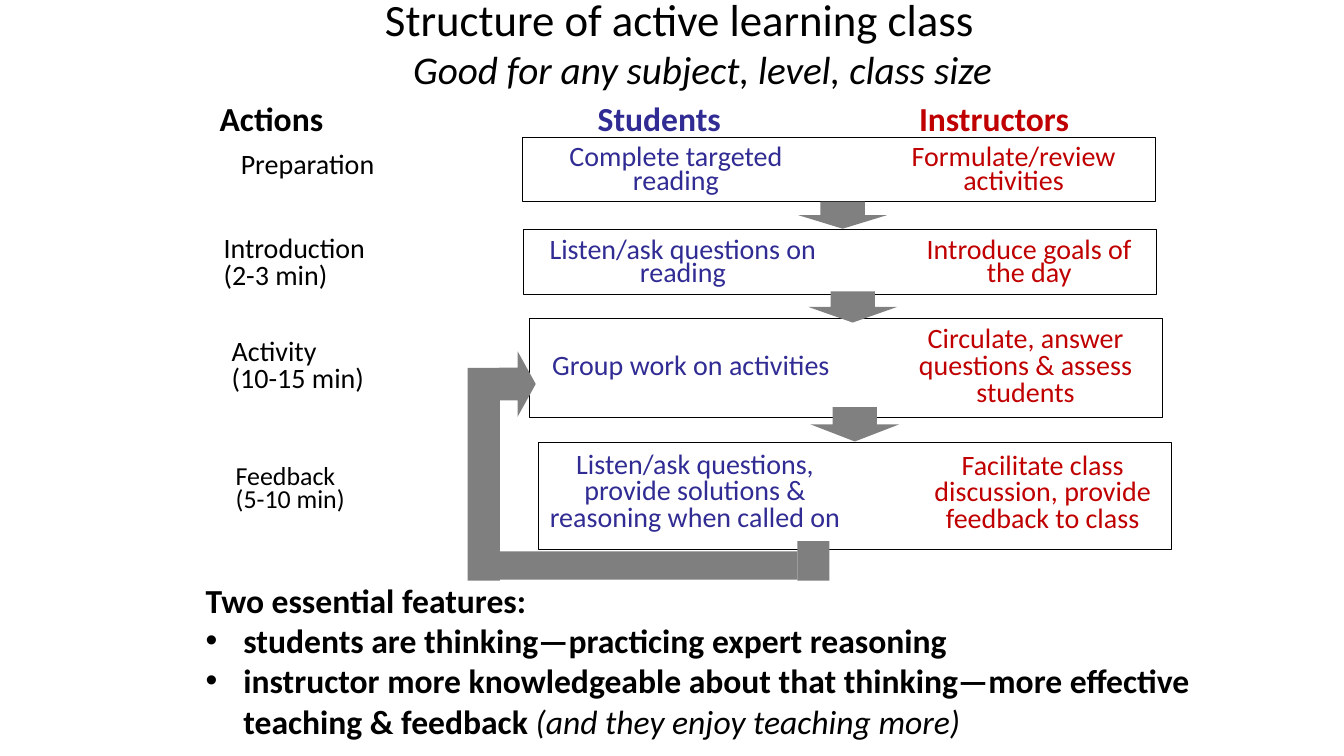
from dataclasses import dataclass

from lxml.etree import SubElement
from pptx import Presentation
from pptx.dml.color import RGBColor
from pptx.enum.shapes import MSO_SHAPE
from pptx.enum.text import MSO_ANCHOR, MSO_AUTO_SIZE, PP_ALIGN
from pptx.oxml.ns import qn
from pptx.util import Pt


@dataclass(frozen=True)
class Theme:
    font: str = "Calibri"
    ink: str = "000000"
    student: str = "312C94"
    instructor: str = "C00000"
    arrow: str = "808080"
    loop: str = "7F7F7F"
    title: float = 32
    subtitle: float = 28
    heading: float = 24
    text: float = 20
    small: float = 18.5


class SlideBuilder:
    def __init__(self, page, theme):
        self.page = page
        self.theme = theme

    def span(self, para, text, size, color=None, bold=False, italic=False):
        span = para.add_run()
        span.text = text
        span.font.name = self.theme.font
        span.font.size = Pt(size)
        span.font.bold = bold
        span.font.italic = italic
        span.font.color.rgb = RGBColor.from_string(color or self.theme.ink)

    def place(self, holder, left, top, width, height, wrap):
        """Move a placeholder and return its text frame, ready for filling."""
        holder.left, holder.top = Pt(left), Pt(top)
        holder.width, holder.height = Pt(width), Pt(height)
        frame = holder.text_frame
        frame.word_wrap = wrap
        frame.auto_size = MSO_AUTO_SIZE.SHAPE_TO_FIT_TEXT
        frame.vertical_anchor = MSO_ANCHOR.TOP
        return frame

    def title(self, heading, subtitle):
        frame = self.place(self.page.shapes.title, 267.8, -9.4, 468, 80, False)
        first, second = frame.paragraphs[0], frame.add_paragraph()
        first.alignment, second.alignment = PP_ALIGN.LEFT, PP_ALIGN.CENTER
        self.span(first, heading, self.theme.title)
        self.span(second, subtitle, self.theme.subtitle, italic=True)

    def features(self, heading, bullets):
        """Fill the body; each bullet is a bold text and an italic remark."""
        frame = self.place(self.page.placeholders[1], 139.7, 410.4, 771, 124, True)
        intro = frame.paragraphs[0]
        intro.space_before = Pt(0)
        self.span(intro, heading, self.theme.heading, bold=True)
        properties = intro._p.get_or_add_pPr()
        properties.set("marL", "0")
        properties.set("indent", "0")
        SubElement(properties, qn("a:buNone"))
        for text, remark in bullets:
            para = frame.add_paragraph()
            para.space_before = Pt(0)
            self.span(para, text, self.theme.heading, bold=True)
            if remark:
                self.span(para, remark, self.theme.heading, italic=True)

    def text(self, paragraphs, area, size, color=None, spacing=0.8,
             centered=False, bold=False):
        """Add a box; a newline inside a paragraph becomes a line break."""
        box = self.page.shapes.add_textbox(*map(Pt, area))
        frame = box.text_frame
        frame.word_wrap = True
        frame.vertical_anchor = MSO_ANCHOR.MIDDLE
        for index, text in enumerate(paragraphs):
            para = frame.add_paragraph() if index else frame.paragraphs[0]
            para.alignment = PP_ALIGN.CENTER if centered else PP_ALIGN.LEFT
            para.line_spacing = spacing
            para.space_before = Pt(0.2 * size)
            for number, line in enumerate(text.split("\n")):
                if number:
                    para.add_line_break()
                self.span(para, line, size, color, bold)

    def shape(self, kind, area, fill=None):
        """Add a filled shape, or a thin black outline when no fill is given."""
        shape = self.page.shapes.add_shape(kind, *map(Pt, area))
        shape.shadow.inherit = False
        if fill:
            shape.fill.solid()
            shape.fill.fore_color.rgb = RGBColor.from_string(fill)
            shape.line.fill.background()
        else:
            shape.fill.background()
            shape.line.width = Pt(0.75)
            shape.line.color.rgb = RGBColor.from_string(self.theme.ink)


@dataclass(frozen=True)
class Stage:
    action: tuple
    action_area: tuple
    students: str
    students_area: tuple
    instructors: str
    instructors_area: tuple
    frame: tuple  # left, top, height
    action_spacing: float = 0.8
    spacing: float = 0.8
    action_size: float = Theme.text


FRAME_WIDTH = 452.2
ARROW_WIDTH = 63.4

STAGES = [
    Stage(("Preparation",), (164.9, 95, 131, 47.5),
          "Complete targeted reading", (370.8, 100.1, 224, 44.6),
          "Formulate/review activities", (612, 100.1, 224, 44.6),
          (373, 97.9, 46.1), spacing=0.7),
    Stage(("Introduction\n(2-3 min)",), (152.6, 164.9, 145.4, 47.5),
          "Listen/ask questions on reading", (375.8, 166.3, 224, 44.6),
          "Introduce goals of the day", (643, 166.3, 184.3, 44.6),
          (373.7, 164.2, 46.1), spacing=0.7),
    Stage(("Activity\n(10-15 min)",), (158.4, 238.3, 145.4, 47.5),
          "Group work on activities", (381.6, 240.5, 224, 44.6),
          "Circulate, answer questions & assess students",
          (620.6, 226.8, 224, 71.3),
          (378, 227.5, 70.6)),
    Stage(("Feedback", "(5-10 min)"), (161.3, 330.5, 145.4, 41),
          "Listen/ask questions, provide solutions & reasoning when called on",
          (384.5, 316.1, 224, 72),
          "Facilitate class discussion, provide feedback to class",
          (642.2, 319.7, 205.2, 66.2),
          (384.5, 316.1, 76.3), action_spacing=0.6, action_size=Theme.small),
]
DOWN_ARROWS = [(570.2, 144, 19.4), (577.4, 208.1, 22.3), (578.9, 290.9, 24.5)]
LOOP_BARS = [(569.5, 386.6, 23, 28.1), (347.8, 393.8, 221.8, 20.2),
             (334.1, 262.8, 23, 151.9)]


def main():
    deck = Presentation()
    deck.slide_width, deck.slide_height = Pt(960), Pt(540)
    theme = Theme()
    builder = SlideBuilder(deck.slides.add_slide(deck.slide_layouts[1]), theme)

    builder.title("Structure of active learning class",
                  "Good for any subject, level, class size")
    for heading, left, width, color in [
        ("Actions", 149.8, 131, theme.ink),
        ("Students", 419.8, 131, theme.student),
        ("Instructors", 649.4, 149, theme.instructor),
    ]:
        builder.text([heading], (left, 63.4, width, 47.5), theme.heading,
                     color, bold=True)

    for stage in STAGES:
        builder.text(stage.action, stage.action_area, stage.action_size,
                     spacing=stage.action_spacing)
        builder.text([stage.students], stage.students_area, theme.text,
                     theme.student, stage.spacing, centered=True)
        builder.text([stage.instructors], stage.instructors_area, theme.text,
                     theme.instructor, stage.spacing, centered=True)
        left, top, height = stage.frame
        builder.shape(MSO_SHAPE.RECTANGLE, (left, top, FRAME_WIDTH, height))

    for left, top, height in DOWN_ARROWS:
        builder.shape(MSO_SHAPE.DOWN_ARROW, (left, top, ARROW_WIDTH, height),
                      theme.arrow)
    builder.shape(MSO_SHAPE.RIGHT_ARROW, (356.8, 250.9, 25.9, 46.8), theme.arrow)
    for area in LOOP_BARS:
        builder.shape(MSO_SHAPE.RECTANGLE, area, theme.loop)

    builder.features("Two essential features:", [
        ("students are thinking—practicing expert reasoning", ""),
        ("instructor more knowledgeable about that thinking—more effective "
         "teaching & feedback ", "(and they enjoy teaching more)"),
    ])
    deck.save("out.pptx")


if __name__ == "__main__":
    main()
